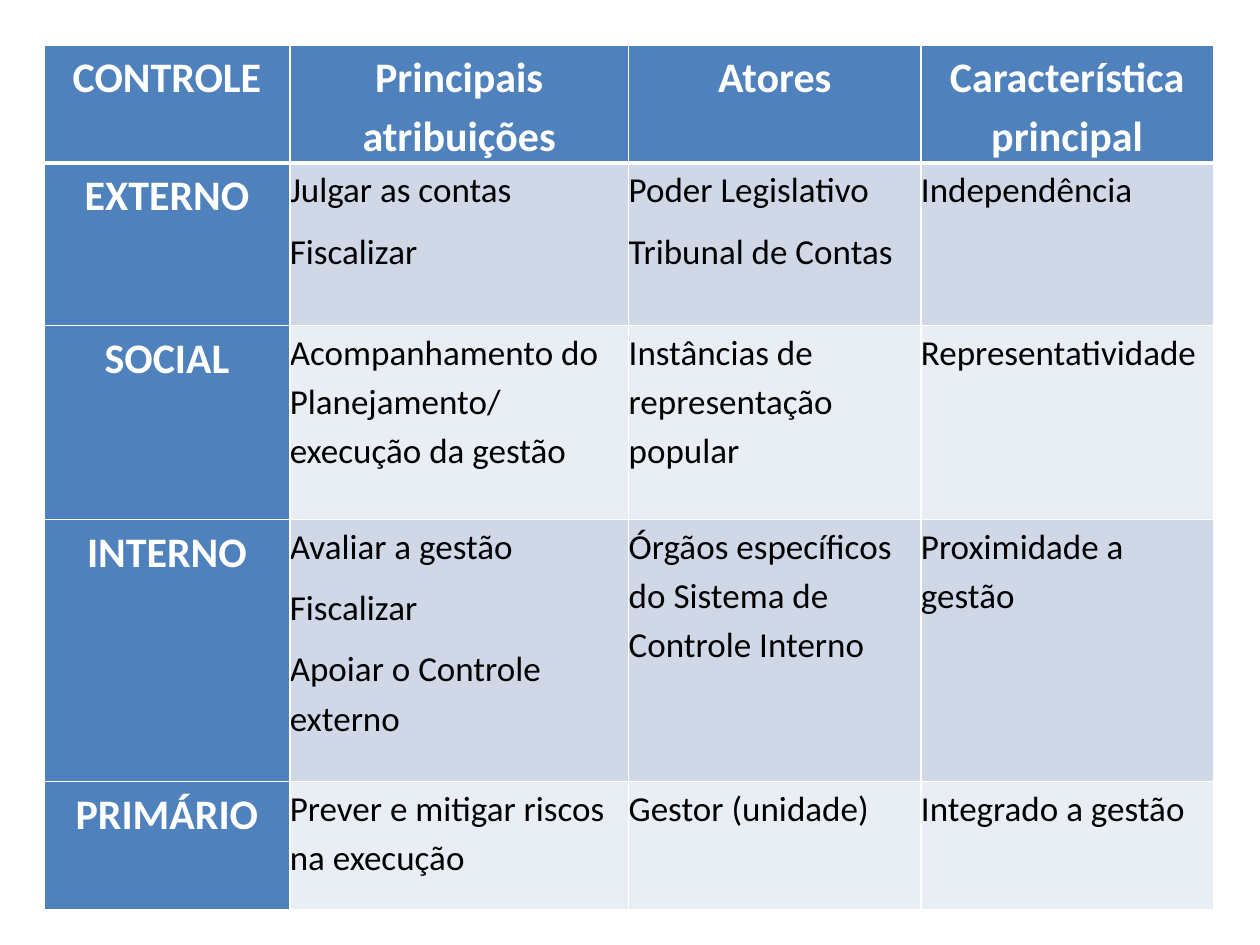
"""Build a slide with a table comparing four kinds of control."""
from lxml.etree import SubElement
from pptx import Presentation
from pptx.dml.color import RGBColor
from pptx.enum.text import PP_ALIGN
from pptx.oxml.ns import qn
from pptx.util import Inches, Pt

WHITE = RGBColor(0xFF, 0xFF, 0xFF)
BLACK = RGBColor(0x00, 0x00, 0x00)
BLUE = RGBColor(0x4F, 0x81, 0xBD)
BANDS = [RGBColor(0xE9, 0xED, 0xF4), RGBColor(0xD0, 0xD8, 0xE8)]

COL_WIDTHS = [1.95, 2.69, 2.32, 2.32]
ROW_HEIGHTS = [0.49, 1.29, 1.54, 2.08, 1.02]
ROWS = [
    ["CONTROLE", "Principais atribuições", "Atores", "Característica principal"],
    ["EXTERNO", "Julgar as contas\nFiscalizar",
     "Poder Legislativo\nTribunal de Contas", "Independência"],
    ["SOCIAL", "Acompanhamento do Planejamento/ execução da gestão",
     "Instâncias de representação popular", "Representatividade"],
    ["INTERNO", "Avaliar a gestão\nFiscalizar\nApoiar o Controle externo",
     "Órgãos específicos do Sistema de Controle Interno", "Proximidade a gestão"],
    ["PRIMÁRIO", "Prever e mitigar riscos na execução",
     "Gestor (unidade)", "Integrado a gestão"],
]
HEAD_FONT = {"name": "Calibri", "size": Pt(24), "bold": True}
BODY_FONT = {"name": "Calibri", "size": Pt(20), "bold": False}
HEAD_PARA = {"alignment": PP_ALIGN.CENTER, "line_spacing": 1.15, "space_after": Pt(6.8)}
BODY_PARA = {**HEAD_PARA, "alignment": PP_ALIGN.LEFT}
MARGINS = ["margin_left", "margin_top", "margin_right", "margin_bottom"]


def set_attrs(obj, values):
    for name, value in values.items():
        setattr(obj, name, value)


def add_borders(cell, widths):
    tcPr = cell._tc.get_or_add_tcPr()
    for side, width in widths.items():
        ln = SubElement(tcPr, qn(f"a:ln{side}"), w=str(Pt(width)))
        fill = SubElement(ln, qn("a:solidFill"))
        SubElement(fill, qn("a:srgbClr"), val=str(WHITE))


prs = Presentation()
set_attrs(prs, {"slide_width": Inches(10), "slide_height": Inches(7.5)})
s = prs.slides.add_slide(prs.slide_layouts[6])

table = s.shapes.add_table(
    len(ROWS), len(COL_WIDTHS), Inches(0.35), Inches(0.36),
    Inches(sum(COL_WIDTHS)), Inches(sum(ROW_HEIGHTS))).table
set_attrs(table, {"first_col": True})
for col, width in zip(table.columns, COL_WIDTHS):
    col.width = Inches(width)
for row, height in zip(table.rows, ROW_HEIGHTS):
    row.height = Inches(height)

for i, texts in enumerate(ROWS):
    for j, text in enumerate(texts):
        cell = table.cell(i, j)
        is_head = i == 0 or j == 0
        set_attrs(cell, dict.fromkeys(MARGINS, 0))
        add_borders(cell, {"L": 1, "R": 1, "T": 3 if i == 1 else 1, "B": 3 if i == 0 else 1})
        cell.fill.solid()
        cell.fill.fore_color.rgb = BLUE if is_head else BANDS[i % 2]
        tf = cell.text_frame
        tf.text = text
        for p in tf.paragraphs:
            set_attrs(p, HEAD_PARA if is_head else BODY_PARA)
            for r in p.runs:
                set_attrs(r.font, HEAD_FONT if is_head else BODY_FONT)
                r.font.color.rgb = WHITE if is_head else BLACK

prs.save("out.pptx")
